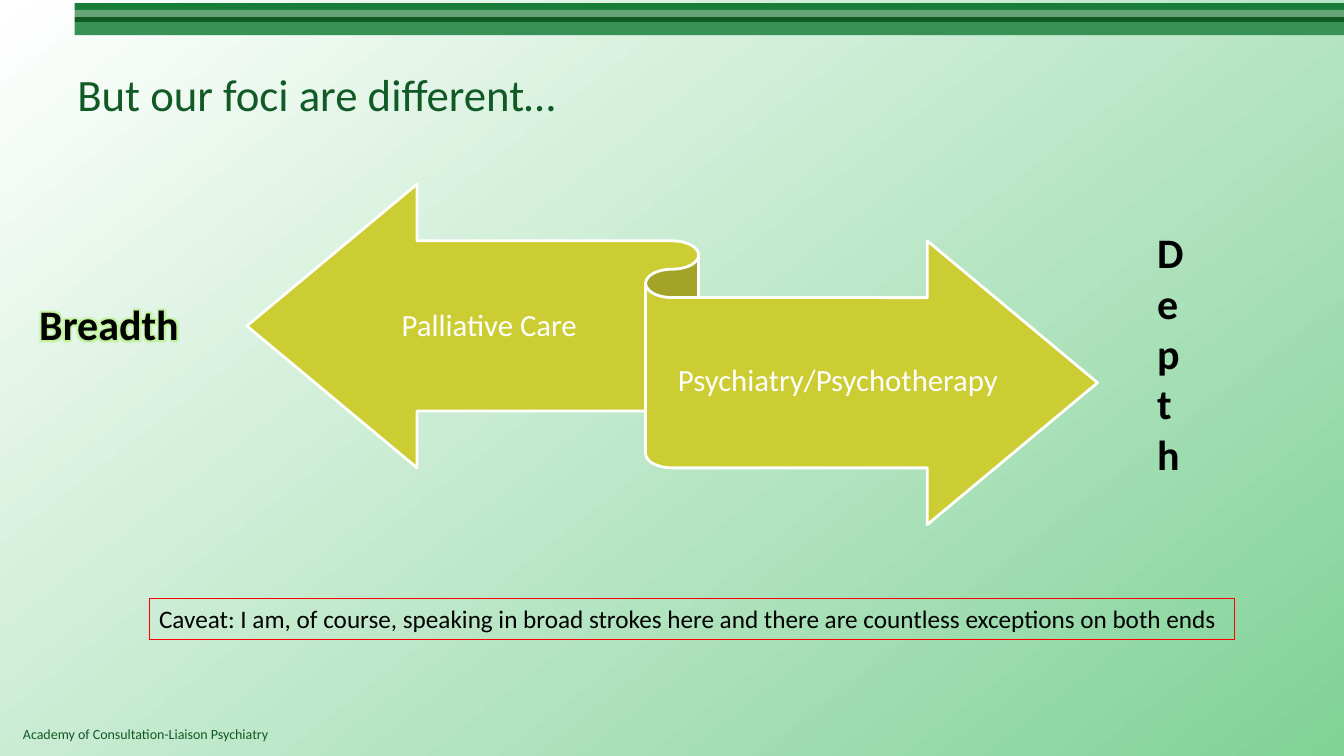
from dataclasses import dataclass

from lxml.etree import SubElement
from pptx import Presentation
from pptx.dml.color import RGBColor
from pptx.enum.shapes import MSO_SHAPE
from pptx.enum.text import MSO_ANCHOR, PP_ALIGN
from pptx.oxml import parse_xml
from pptx.oxml.ns import nsdecls, qn
from pptx.util import Cm, Pt


@dataclass(frozen=True)
class Theme:
    font: str = "Calibri"
    dark_green: str = "105A25"
    bars: tuple = ("177D38", "66A677", "105A25", "389155")
    background: tuple = ("FFFFFF", "81D297")
    ribbon: str = "CCCC33"
    white: str = "FFFFFF"
    black: str = "000000"
    red: str = "FF0000"
    outline: str = "73AC39"
    glow: str = "BEF397"
    title_size: int = 32
    label_size: int = 30
    arrow_size: int = 22
    caveat_size: int = 18
    footer_size: int = 10


class SlideBuilder:
    def __init__(self, slide, theme):
        self.slide = slide
        self.theme = theme

    def background(self, angle):
        fill = self.slide.background.fill
        fill.gradient()
        fill.gradient_angle = angle
        for stop, color in zip(fill.gradient_stops, self.theme.background):
            stop.color.rgb = RGBColor.from_string(color)

    def shape(self, kind, box, fill=None, line=None, line_width=1):
        shape = self.slide.shapes.add_shape(kind, *map(Cm, box))
        shape.shadow.inherit = False
        if fill:
            shape.fill.solid()
            shape.fill.fore_color.rgb = RGBColor.from_string(fill)
        else:
            shape.fill.background()
        if line:
            shape.line.color.rgb = RGBColor.from_string(line)
            shape.line.width = Pt(line_width)
        else:
            shape.line.fill.background()
        return shape

    def text_box(self, box, text, size, color, **options):
        shape = self.slide.shapes.add_textbox(*map(Cm, box))
        return self.fill_text(shape, text, size, color, **options)

    def fill_text(self, shape, text, size, color, bold=False, frame_format=None,
                  paragraph_format=None):
        frame = shape.text_frame
        frame_values = {"word_wrap": True, "vertical_anchor": MSO_ANCHOR.TOP}
        frame_values.update(frame_format or {})
        for name, value in frame_values.items():
            setattr(frame, name, value)
        paragraph = frame.paragraphs[0]
        paragraph_values = {"alignment": PP_ALIGN.LEFT}
        paragraph_values.update(paragraph_format or {})
        for name, value in paragraph_values.items():
            setattr(paragraph, name, value)
        run = paragraph.add_run()
        run.text = text
        font_values = {"name": self.theme.font, "size": Pt(size), "bold": bold}
        for name, value in font_values.items():
            setattr(run.font, name, value)
        run.font.color.rgb = RGBColor.from_string(color)
        return shape

    def outline_text(self, shape, width, glow_radius=0):
        run = shape.text_frame.paragraphs[0].runs[0]
        properties = run._r.get_or_add_rPr()
        properties.insert(0, parse_xml(
            f'<a:ln {nsdecls("a")} w="{Pt(width)}"><a:solidFill>'
            f'<a:srgbClr val="{self.theme.outline}"/></a:solidFill></a:ln>'))
        if glow_radius:
            effects = parse_xml(f'<a:effectLst {nsdecls("a")}/>')
            glow = SubElement(effects, qn("a:glow"), rad=str(Pt(glow_radius)))
            SubElement(glow, qn("a:srgbClr"), val=self.theme.glow)
            properties.find(qn("a:solidFill")).addnext(effects)


def main():
    presentation = Presentation()
    presentation.slide_width, presentation.slide_height = Cm(33.87), Cm(19.05)
    slide = presentation.slides.add_slide(presentation.slide_layouts[6])
    theme = Theme()
    builder = SlideBuilder(slide, theme)
    builder.background(angle=308)

    # Header bars
    bar_edges = (0.08, 0.25, 0.43, 0.56, 0.89)
    for top, bottom, color in zip(bar_edges, bar_edges[1:], theme.bars):
        builder.shape(MSO_SHAPE.RECTANGLE, (1.88, top, 31.99, bottom - top), color)

    # Footer and title
    builder.text_box((0.33, 18.16, 23.5, 0.68),
                     "Academy of Consultation-Liaison Psychiatry",
                     theme.footer_size, theme.dark_green)
    builder.text_box((1.7, 0.76, 30.48, 3.18), "But our foci are different…",
                     theme.title_size, theme.dark_green,
                     frame_format={"vertical_anchor": MSO_ANCHOR.MIDDLE})

    # Ribbon with a label on each arrow
    builder.shape(MSO_SHAPE.LEFT_RIGHT_RIBBON, (6.22, 4.64, 21.44, 8.58),
                  theme.ribbon, theme.white, 2)
    arrow_labels = (("Palliative Care", (8.79, 6.14, 7.08, 4.2)),
                    ("Psychiatry/Psychotherapy", (16.94, 7.51, 8.36, 4.2)))
    for label, box in arrow_labels:
        builder.text_box(box, label, theme.arrow_size, theme.white,
                         frame_format={"vertical_anchor": MSO_ANCHOR.MIDDLE,
                                       "margin_left": 0, "margin_right": 0},
                         paragraph_format={"alignment": PP_ALIGN.CENTER,
                                           "line_spacing": 0.9})

    # Labels at the two ends
    breadth = builder.text_box((0.74, 7.39, 5.87, 1.55), "Breadth",
                               theme.label_size, theme.black, bold=True)
    builder.outline_text(breadth, 1.75, glow_radius=6)
    depth = builder.text_box((28.91, 5.59, 2.03, 7.87), "Depth",
                             theme.label_size, theme.black, bold=True,
                             frame_format={"word_wrap": False})
    depth.text_frame._txBody.bodyPr.set("vert", "wordArtVert")
    builder.outline_text(depth, 0.75)

    # Caveat
    caveat = builder.shape(MSO_SHAPE.RECTANGLE, (3.76, 15.09, 27.36, 1.02),
                           line=theme.red, line_width=0.75)
    builder.fill_text(caveat,
                      "Caveat: I am, of course, speaking in broad strokes here "
                      "and there are countless exceptions on both ends",
                      theme.caveat_size, theme.black)

    presentation.save("out.pptx")


if __name__ == "__main__":
    main()
